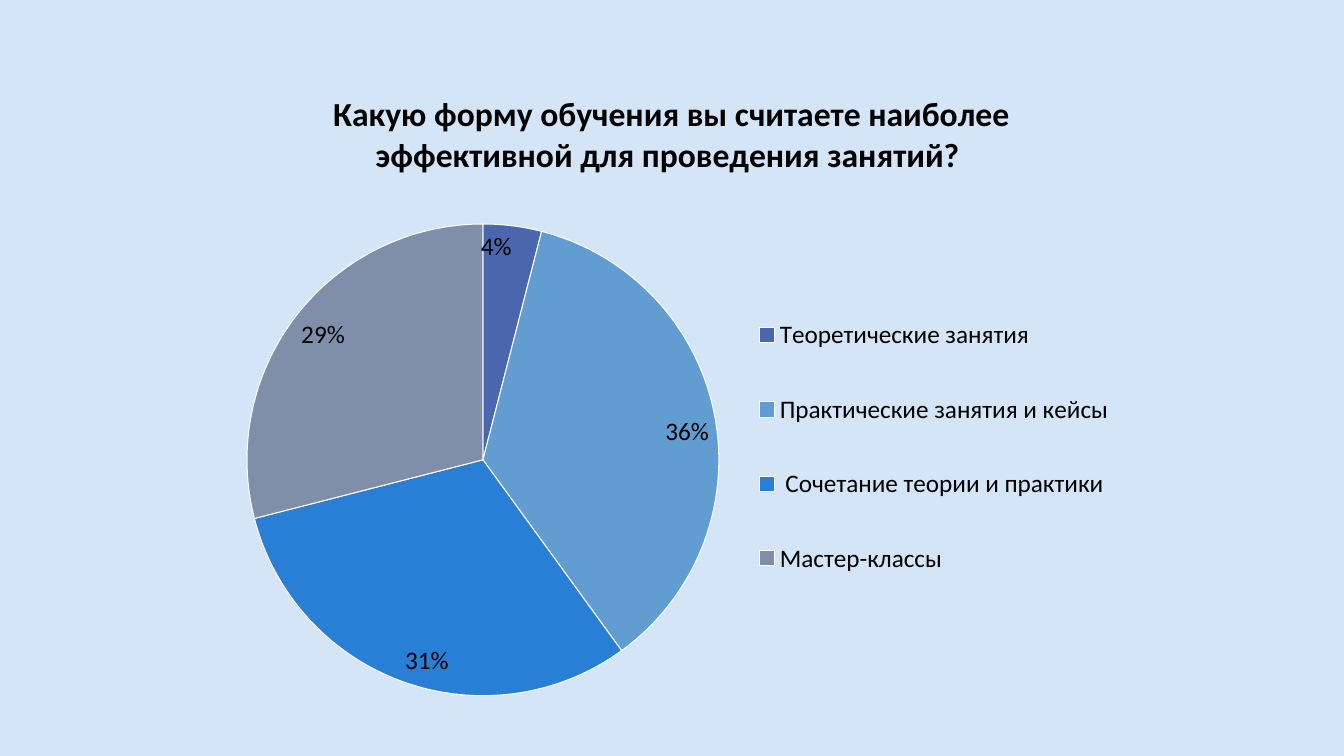
from dataclasses import dataclass
from typing import Any

import lxml.etree
import pptx
import pptx.chart.data
import pptx.dml.color
import pptx.enum.chart
import pptx.oxml
import pptx.oxml.ns
import pptx.util

COLORS = {
    "background": "D4E5F7",
    "text": "000000",
    "border": "FFFFFF",
    "theory": "4A66AC",
    "practice": "629DD1",
    "combined": "297FD5",
    "workshop": "7F8FA9",
}
TITLE = " Какую форму обучения вы считаете наиболее эффективной для проведения занятий?"


@dataclass(frozen=True)
class Answer:
    name: str
    percent: int
    color: str


@dataclass(frozen=True)
class Placement:
    parent: str
    index: int
    fractions: dict[str, float]
    target: str = ""


ANSWERS = [
    Answer("Теоретические занятия", 4, "theory"),
    Answer("Практические занятия и кейсы ", 36, "practice"),
    Answer(" Сочетание теории и практики ", 31, "combined"),
    Answer("Мастер-классы", 29, "workshop"),
]
PLACEMENTS = [
    Placement("c:title", 1, {"x": 0.11, "y": 0.05}),
    Placement("c:plotArea", 0, {"x": 0.03, "y": 0.26, "w": 0.52, "h": 0.72}, "inner"),
    Placement("c:legend", 1, {"x": 0.59, "y": 0.34, "w": 0.4, "h": 0.52}),
]
FONT_FORMAT = {"name": "Calibri", "size": pptx.util.Pt(18), "bold": False}
TITLE_FORMAT = {"name": "Calibri", "size": pptx.util.Pt(24), "bold": True}
LEGEND_FORMAT = {
    "position": pptx.enum.chart.XL_LEGEND_POSITION.RIGHT,
    "include_in_layout": False,
}
LABEL_FORMAT = {
    "show_percentage": True,
    "show_value": False,
    "number_format": "0%",
    "number_format_is_linked": False,
    "position": pptx.enum.chart.XL_LABEL_POSITION.INSIDE_END,
}


def rgb(name: str) -> pptx.dml.color.RGBColor:
    return pptx.dml.color.RGBColor.from_string(COLORS[name])


def set_format(target: Any, values: dict[str, Any]) -> None:
    for attribute, value in values.items():
        setattr(target, attribute, value)


def set_font(font: Any, values: dict[str, Any]) -> None:
    set_format(font, values)
    font.color.rgb = rgb("text")


def place(chart: Any, placement: Placement) -> None:
    parent = chart.element.xpath(f".//{placement.parent}")[0]
    for old_layout in parent.xpath("./c:layout"):
        parent.remove(old_layout)
    layout = pptx.oxml.parse_xml(
        f"<c:layout {pptx.oxml.ns.nsdecls('c')}><c:manualLayout/></c:layout>"
    )
    values = {"layoutTarget": placement.target} if placement.target else {}
    values |= {f"{key}Mode": "edge" for key in ("x", "y")}
    values |= placement.fractions
    for tag, value in values.items():
        element = lxml.etree.SubElement(layout[0], pptx.oxml.ns.qn(f"c:{tag}"))
        element.set("val", str(value))
    parent.insert(placement.index, layout)


def add_survey_chart(slide: Any) -> None:
    data = pptx.chart.data.CategoryChartData()
    data.categories = [answer.name for answer in ANSWERS]
    data.add_series("Series 1", [answer.percent for answer in ANSWERS])
    chart = slide.shapes.add_chart(
        pptx.enum.chart.XL_CHART_TYPE.PIE,
        *map(pptx.util.Inches, (2.18, 0.52, 9, 6.52)),
        data,
    ).chart
    set_font(chart.font, FONT_FORMAT)

    chart.has_title = True
    paragraph = chart.chart_title.text_frame.paragraphs[0]
    run = paragraph.add_run()
    run.text = TITLE
    set_font(run.font, TITLE_FORMAT)

    chart.has_legend = True
    set_format(chart.legend, LEGEND_FORMAT)
    set_font(chart.legend.font, FONT_FORMAT)

    plot = chart.plots[0]
    plot.vary_by_categories = True
    plot.has_data_labels = True
    set_format(plot.data_labels, LABEL_FORMAT)
    set_font(plot.data_labels.font, FONT_FORMAT)

    for index, answer in enumerate(ANSWERS):
        slice_format = plot.series[0].points[index].format
        slice_format.fill.solid()
        slice_format.fill.fore_color.rgb = rgb(answer.color)
        slice_format.line.color.rgb = rgb("border")
        slice_format.line.width = pptx.util.Pt(0.75)

    for placement in PLACEMENTS:
        place(chart, placement)


def main() -> None:
    presentation = pptx.Presentation()
    presentation.slide_width = pptx.util.Inches(13.33)
    presentation.slide_height = pptx.util.Inches(7.5)
    slide = presentation.slides.add_slide(presentation.slide_layouts[6])
    slide.background.fill.solid()
    slide.background.fill.fore_color.rgb = rgb("background")
    add_survey_chart(slide)
    presentation.save("out.pptx")


if __name__ == "__main__":
    main()
